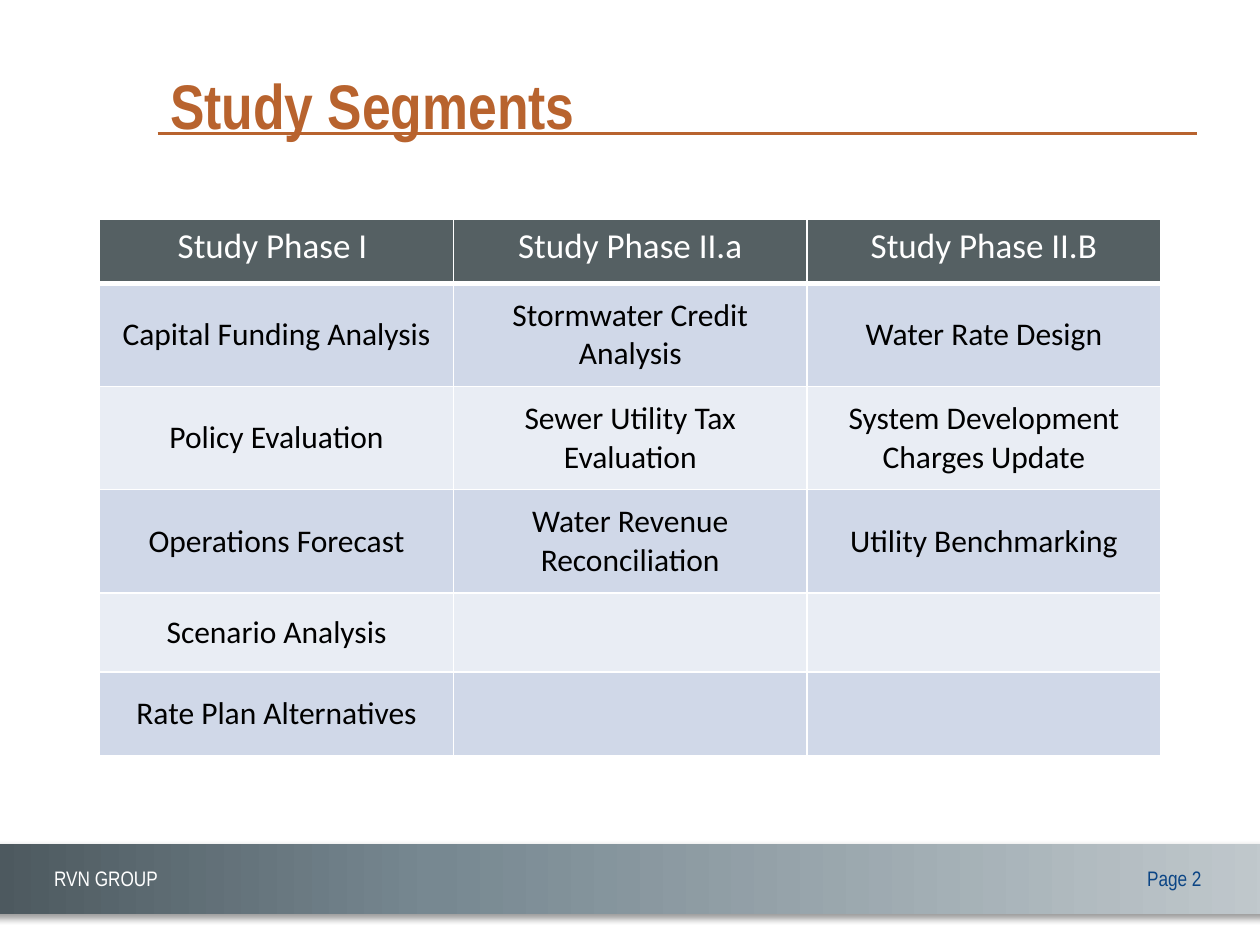
import copy

import lxml.etree
import pptx
import pptx.dml.color
import pptx.enum.shapes
import pptx.enum.text
import pptx.oxml
import pptx.oxml.ns
import pptx.util

Cm = pptx.util.Cm
Pt = pptx.util.Pt
RGBColor = pptx.dml.color.RGBColor
PP_ALIGN = pptx.enum.text.PP_ALIGN
MSO_ANCHOR = pptx.enum.text.MSO_ANCHOR
qn = pptx.oxml.ns.qn

WHITE = RGBColor(0xFF, 0xFF, 0xFF)
BLACK = RGBColor(0x00, 0x00, 0x00)
RUST = RGBColor(0xB8, 0x63, 0x2E)
NAVY = RGBColor(0x0B, 0x45, 0x85)
SLATE = RGBColor(0x55, 0x60, 0x63)
BLUE_BAND = RGBColor(0xD0, 0xD8, 0xE8)
PALE_BAND = RGBColor(0xE9, 0xED, 0xF4)
FOOTER_STOPS = (
    (0, RGBColor(0x4B, 0x57, 0x5D)),
    (0.35, RGBColor(0x77, 0x88, 0x91)),
    (1, RGBColor(0xC1, 0xC9, 0xCD)),
)

HEADING_FONT = "Arial Narrow"
TABLE_FONT = "Calibri"

PHASES = [
    ("Study Phase I ", "Study Phase II.a", "Study Phase II.B"),
    ("Capital Funding Analysis", "Stormwater Credit Analysis", "Water Rate Design"),
    ("Policy Evaluation", "Sewer Utility Tax Evaluation",
     "System Development Charges Update"),
    ("Operations Forecast", "Water Revenue Reconciliation", "Utility Benchmarking"),
    ("Scenario Analysis", "", ""),
    ("Rate Plan Alternatives", "", ""),
]
ROW_HEIGHTS = (1.29, 2.08, 2.08, 2.08, 1.6, 1.69)


def write_text(frame, text, *, size, color, font=HEADING_FONT, bold=False,
               align=PP_ALIGN.LEFT):
    paragraph = frame.paragraphs[0]
    paragraph.alignment = align
    run = paragraph.add_run()
    run.text = text
    run.font.name = font
    run.font.size = Pt(size)
    run.font.bold = bold
    run.font.color.rgb = color


def add_label(slide, text, left, top, width, height, **text_format):
    label = slide.shapes.add_textbox(Cm(left), Cm(top), Cm(width), Cm(height))
    label.text_frame.word_wrap = True
    label.text_frame.vertical_anchor = MSO_ANCHOR.MIDDLE
    write_text(label.text_frame, text, **text_format)


def add_footer(slide, left, top, width, height):
    band = slide.shapes.add_shape(
        pptx.enum.shapes.MSO_SHAPE.RECTANGLE, Cm(left), Cm(top), Cm(width), Cm(height))
    band.line.fill.background()
    band.fill.gradient()
    band.fill.gradient_angle = 0
    stop_list = band.element.spPr.find(".//" + qn("a:gsLst"))
    stop_list.append(copy.deepcopy(stop_list[0]))
    for stop, (position, color) in zip(band.fill.gradient_stops, FOOTER_STOPS):
        stop.position = position
        stop.color.rgb = color

    band.shadow.inherit = False
    shadow = lxml.etree.SubElement(
        band.element.spPr.find(qn("a:effectLst")), qn("a:outerShdw"),
        blurRad=str(Pt(4)), dist=str(Pt(3)), dir="2700000", rotWithShape="0")
    shade = lxml.etree.SubElement(shadow, qn("a:srgbClr"), val=str(BLACK))
    lxml.etree.SubElement(shade, qn("a:alpha"), val="40000")

    label_top = top + 0.3
    add_label(slide, "Page 2 ", left + width - 3.3, label_top, 2.06, 0.77,
              size=12, color=NAVY, align=PP_ALIGN.RIGHT)
    add_label(slide, "RVN GROUP", left + 1.27, label_top, 3.6, 0.77,
              size=12, color=WHITE)


def add_title(slide, left, top, width, height):
    rule_top = Cm(top + 1.85)
    rule = slide.shapes.add_connector(
        pptx.enum.shapes.MSO_CONNECTOR.STRAIGHT,
        Cm(left), rule_top, Cm(left + width), rule_top)
    rule.line.color.rgb = RUST
    rule.line.width = Pt(1.5)
    lxml.etree.SubElement(rule.element.spPr, qn("a:effectLst"))
    add_label(slide, "Study Segments", left, top, width, height,
              size=36, color=RUST, bold=True)


def add_borders(cell, bottom_width):
    """Draw white borders; call before setting the fill, which must follow them."""
    properties = cell._tc.get_or_add_tcPr()
    for side, width in (("L", 1), ("R", 1), ("T", 1), ("B", bottom_width)):
        border = lxml.etree.SubElement(properties, qn(f"a:ln{side}"), w=str(Pt(width)))
        fill = lxml.etree.SubElement(border, qn("a:solidFill"))
        lxml.etree.SubElement(fill, qn("a:srgbClr"), val=str(WHITE))


def add_phase_table(slide, left, top, width):
    column_count = len(PHASES[0])
    table = slide.shapes.add_table(
        len(PHASES), column_count,
        Cm(left), Cm(top), Cm(width), Cm(sum(ROW_HEIGHTS))).table
    for column in table.columns:
        column.width = Cm(width / column_count)
    for row_index, (segments, height) in enumerate(zip(PHASES, ROW_HEIGHTS)):
        table.rows[row_index].height = Cm(height)
        is_header = row_index == 0
        band = SLATE if is_header else (PALE_BAND, BLUE_BAND)[row_index % 2]
        for column_index, segment in enumerate(segments):
            cell = table.cell(row_index, column_index)
            add_borders(cell, bottom_width=3 if is_header else 1)
            cell.fill.solid()
            cell.fill.fore_color.rgb = band
            cell.vertical_anchor = MSO_ANCHOR.TOP if is_header else MSO_ANCHOR.MIDDLE
            if segment:
                write_text(cell.text_frame, segment, font=TABLE_FONT,
                           size=20 if is_header else 18,
                           color=WHITE if is_header else BLACK,
                           align=PP_ALIGN.CENTER)


def main():
    presentation = pptx.Presentation()
    presentation.slide_width = Cm(25.4)
    presentation.slide_height = Cm(19.05)
    slide = presentation.slides.add_slide(presentation.slide_layouts[6])
    add_footer(slide, -0.43, 17.02, 26.24, 1.4)
    add_title(slide, 3.18, 0.84, 20.95, 2.54)
    add_phase_table(slide, 2.01, 4.42, 21.39)
    presentation.save("out.pptx")


if __name__ == "__main__":
    main()
